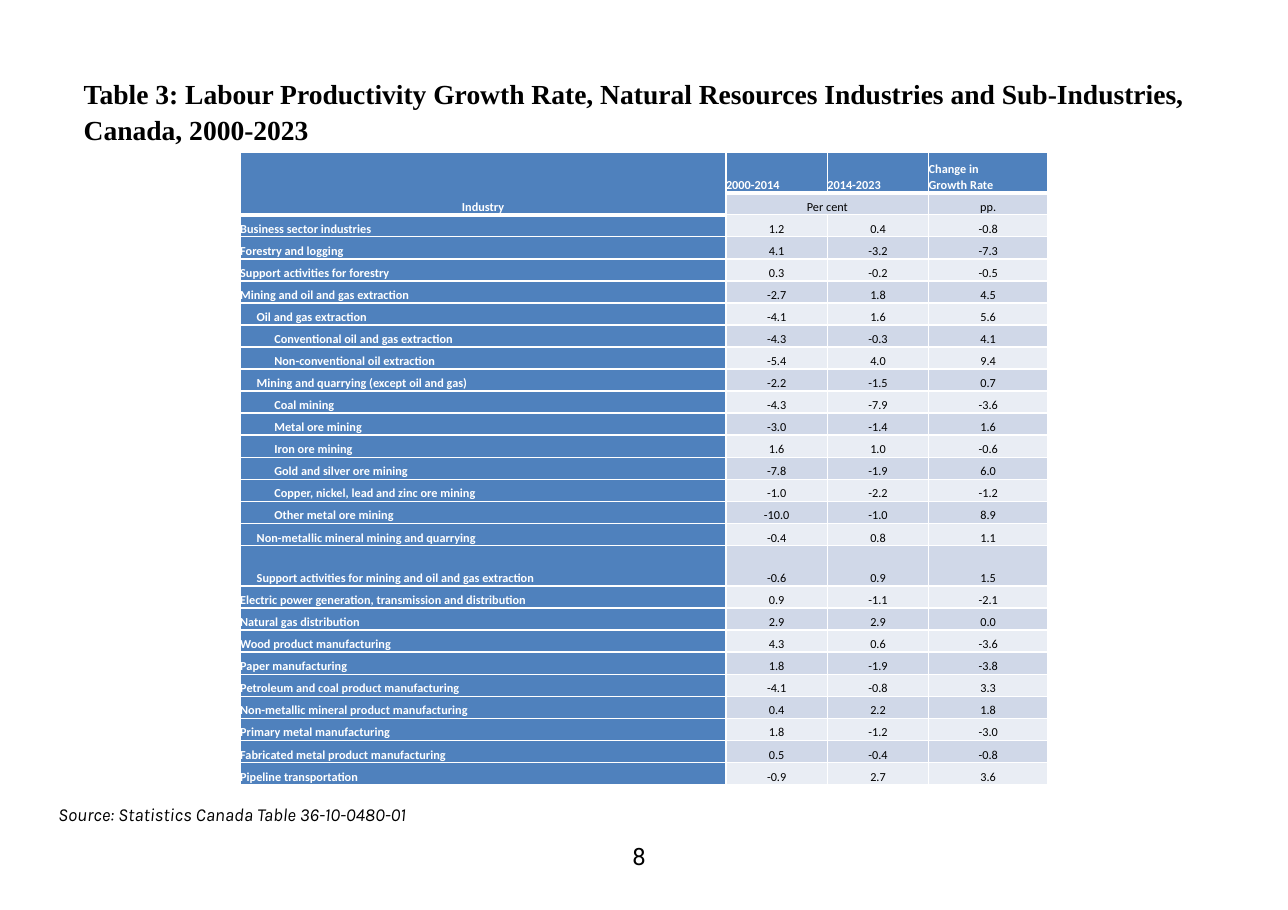
from lxml.etree import SubElement
from pptx import Presentation
from pptx.dml.color import RGBColor
from pptx.enum.text import MSO_ANCHOR, PP_ALIGN
from pptx.oxml.ns import qn
from pptx.util import Inches, Pt

COLORS = {
    "black": "000000",
    "white": "FFFFFF",
    "blue": "4F81BD",
    "dark_band": "D0D8E8",
    "light_band": "E9EDF4",
}
TITLE = ("Table 3: Labour Productivity Growth Rate, Natural Resources Industries "
         "and Sub-Industries, Canada, 2000-2023")
HEADERS = ["Industry", "2000-2014", "2014-2023", "Change in \vGrowth Rate"]
UNITS = ["Per cent", "", "pp."]
INDENTS = [0, 0.15, 0.31]
COL_WIDTHS = [4.41, 0.92, 0.92, 1.08]
ROW_HEIGHT, TALL_ROW_HEIGHT = 0.2, 0.37
TALL_ROWS = (0, 17)
ROWS = [
    (0, "Business sector industries", "1.2", "0.4", "-0.8"),
    (0, "Forestry and logging", "4.1", "-3.2", "-7.3"),
    (0, "Support activities for forestry", "0.3", "-0.2", "-0.5"),
    (0, "Mining and oil and gas extraction", "-2.7", "1.8", "4.5"),
    (1, "Oil and gas extraction", "-4.1", "1.6", "5.6"),
    (2, "Conventional oil and gas extraction", "-4.3", "-0.3", "4.1"),
    (2, "Non-conventional oil extraction", "-5.4", "4.0", "9.4"),
    (1, "Mining and quarrying (except oil and gas)", "-2.2", "-1.5", "0.7"),
    (2, "Coal mining", "-4.3", "-7.9", "-3.6"),
    (2, "Metal ore mining", "-3.0", "-1.4", "1.6"),
    (2, "Iron ore mining", "1.6", "1.0", "-0.6"),
    (2, "Gold and silver ore mining", "-7.8", "-1.9", "6.0"),
    (2, "Copper, nickel, lead and zinc ore mining", "-1.0", "-2.2", "-1.2"),
    (2, "Other metal ore mining", "-10.0", "-1.0", "8.9"),
    (1, "Non-metallic mineral mining and quarrying", "-0.4", "0.8", "1.1"),
    (1, "Support activities for mining and oil and gas extraction", "-0.6", "0.9", "1.5"),
    (0, "Electric power generation, transmission and distribution", "0.9", "-1.1", "-2.1"),
    (0, "Natural gas distribution", "2.9", "2.9", "0.0"),
    (0, "Wood product manufacturing", "4.3", "0.6", "-3.6"),
    (0, "Paper manufacturing", "1.8", "-1.9", "-3.8"),
    (0, "Petroleum and coal product manufacturing", "-4.1", "-0.8", "3.3"),
    (0, "Non-metallic mineral product manufacturing", "0.4", "2.2", "1.8"),
    (0, "Primary metal manufacturing", "1.8", "-1.2", "-3.0"),
    (0, "Fabricated metal product manufacturing", "0.5", "-0.4", "-0.8"),
    (0, "Pipeline transportation", "-0.9", "2.7", "3.6"),
]


def rgb(name):
    return RGBColor.from_string(COLORS[name])


def set_margins(box, left=0, top=0, right=0, bottom=0):
    box.margin_left, box.margin_top = Inches(left), Inches(top)
    box.margin_right, box.margin_bottom = Inches(right), Inches(bottom)


def format_runs(p, font, size, color="black", bold=False, italic=False):
    for r in p.runs:
        r.font.name, r.font.size = font, Pt(size)
        r.font.bold, r.font.italic = bold, italic
        r.font.color.rgb = rgb(color)


def space_paragraph(p):
    p.line_spacing = 1.07
    p.space_before = Pt(0)
    p.space_after = Pt(8)


def add_title(s):
    sp = s.shapes.title
    sp.left, sp.top = Inches(0.76), Inches(0.67)
    sp.width, sp.height = Inches(10.38), Inches(0.64)
    tf = sp.text_frame
    tf.text = TITLE
    tf.word_wrap = True
    tf.vertical_anchor = MSO_ANCHOR.TOP
    set_margins(tf, top=0.01)
    p = tf.paragraphs[0]
    p.alignment = PP_ALIGN.LEFT
    space_paragraph(p)
    format_runs(p, "Times New Roman", 18, bold=True)


def add_text(s, text, left, top, width, height):
    tf = s.shapes.add_textbox(Inches(left), Inches(top), Inches(width), Inches(height)).text_frame
    tf.word_wrap = True
    tf.text = text
    return tf


def add_source(s):
    p = add_text(s, "Source: Statistics Canada Table 36-10-0480-01", 0.43, 7.23, 5.85, 0.31).paragraphs[0]
    space_paragraph(p)
    format_runs(p, "Karla", 12, italic=True)


def add_page_number(s):
    tf = add_text(s, "8", 5.66, 7.64, 0.34, 0.26)
    set_margins(tf)
    p = tf.paragraphs[0]
    p._p.get_or_add_pPr().set("marL", str(Inches(0.08)))
    format_runs(p, "Roboto", 15.6)
    p.runs[0].font._element.set("spc", "-70")


def add_header_borders(cell):
    tc_pr = cell._tc.get_or_add_tcPr()
    for side, width in (("L", 1), ("R", 1), ("T", 1), ("B", 3)):
        ln = SubElement(tc_pr, qn(f"a:ln{side}"), w=str(Pt(width)))
        fill = SubElement(ln, qn("a:solidFill"))
        SubElement(fill, qn("a:srgbClr"), val=COLORS["white"])


def fill_cell(cell, text, fill, centered=True, heading=False, indent=0):
    cell.fill.solid()
    cell.fill.fore_color.rgb = rgb(fill)
    cell.vertical_anchor = MSO_ANCHOR.BOTTOM
    set_margins(cell)
    cell.text_frame.text = text
    p = cell.text_frame.paragraphs[0]
    p.alignment = PP_ALIGN.CENTER if centered else PP_ALIGN.LEFT
    if indent:
        p._p.get_or_add_pPr().set("indent", str(Inches(indent)))
    space_paragraph(p)
    p.font.size = Pt(8)
    format_runs(p, "Calibri", 8, "white" if heading else "black", bold=heading)


def add_growth_table(s):
    n_rows = len(ROWS) + 2
    heights = [TALL_ROW_HEIGHT if i in TALL_ROWS else ROW_HEIGHT for i in range(n_rows)]
    table = s.shapes.add_table(n_rows, len(COL_WIDTHS), Inches(2.18), Inches(1.38),
                               Inches(sum(COL_WIDTHS)), Inches(sum(heights))).table
    table.first_row = table.horz_banding = False
    for column, width in zip(table.columns, COL_WIDTHS):
        column.width = Inches(width)
    for row, height in zip(table.rows, heights):
        row.height = Inches(height)

    table.cell(0, 0).merge(table.cell(1, 0))
    table.cell(1, 1).merge(table.cell(1, 2))
    for col, text in enumerate(HEADERS):
        add_header_borders(table.cell(0, col))
        fill_cell(table.cell(0, col), text, "blue", centered=col == 0, heading=True)
    add_header_borders(table.cell(1, 0))
    fill_cell(table.cell(1, 0), "", "blue")
    for col, text in enumerate(UNITS, 1):
        fill_cell(table.cell(1, col), text, "dark_band")

    for i, (level, industry, *rates) in enumerate(ROWS, 2):
        fill_cell(table.cell(i, 0), industry, "blue", centered=False, heading=True,
                  indent=INDENTS[level])
        band = "dark_band" if i % 2 else "light_band"
        for col, rate in enumerate(rates, 1):
            fill_cell(table.cell(i, col), rate, band)


def main():
    prs = Presentation()
    prs.slide_width, prs.slide_height = Inches(11.69), Inches(8.26)
    s = prs.slides.add_slide(prs.slide_layouts[5])
    add_title(s)
    add_page_number(s)
    add_growth_table(s)
    add_source(s)
    prs.save("out.pptx")


if __name__ == "__main__":
    main()
